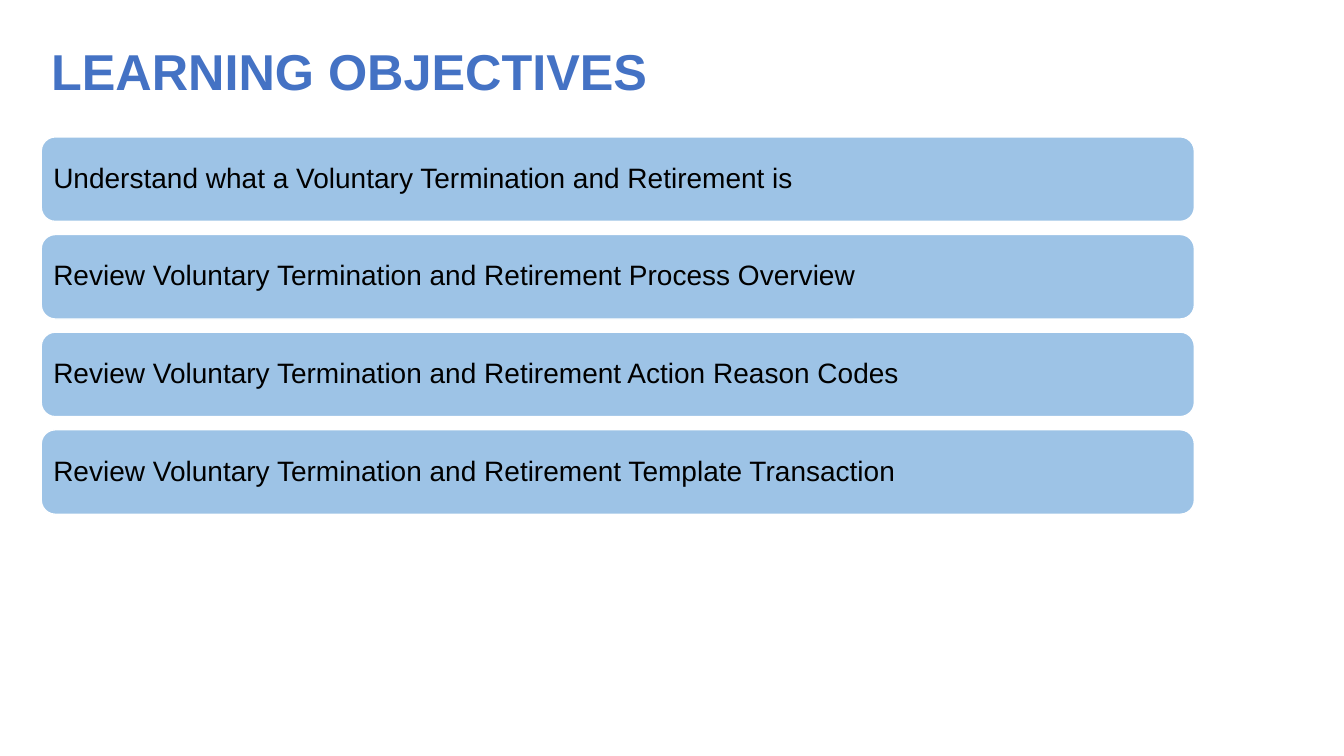
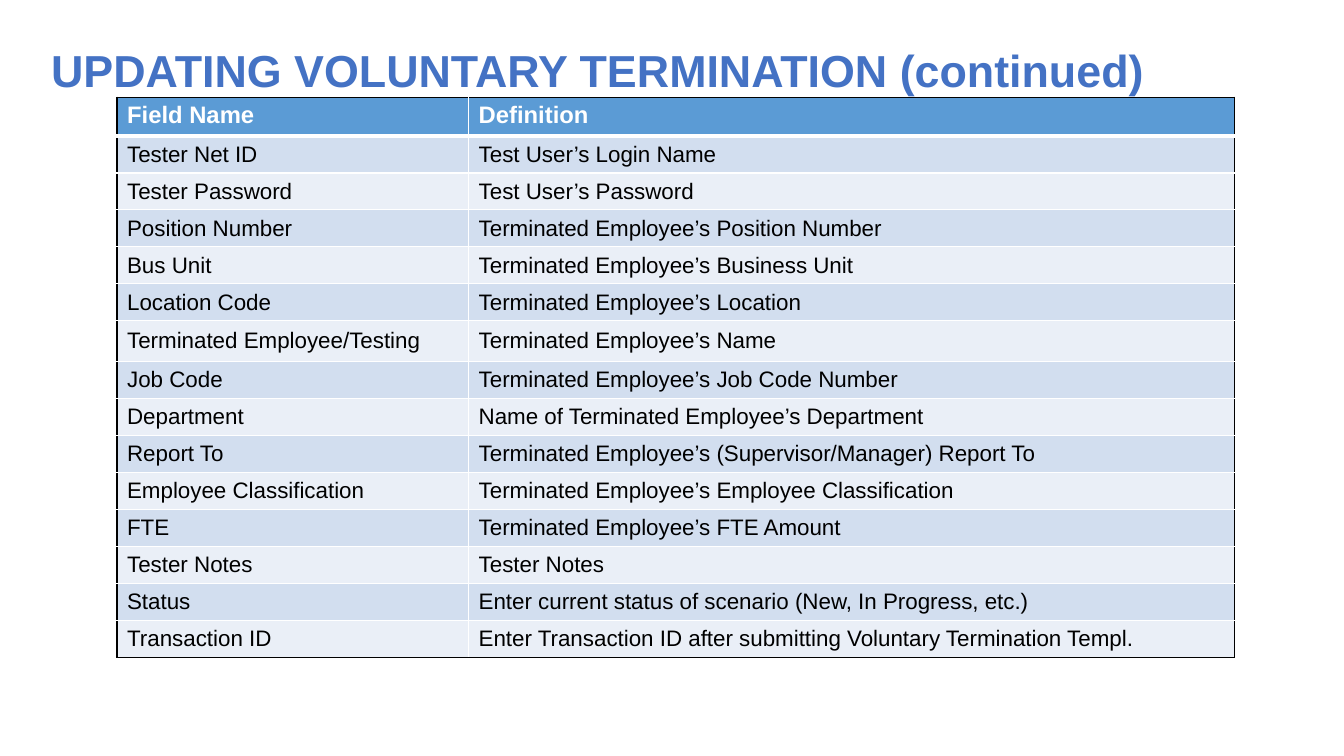
"""Build two training slides: learning objectives and a field table."""
from dataclasses import dataclass
from typing import Any

from lxml import etree
from pptx import Presentation
from pptx import util as u
from pptx.dml import color as col
from pptx.enum import shapes, text
from pptx.oxml import ns

BLUE, PALE, HEAD = "4472C4", "9DC3E6", "5B9BD5"
BANDS = ("D2DEEF", "EAEFF7")
BLACK, WHITE = "000000", "FFFFFF"
FACE = "Arial"
MID = text.MSO_ANCHOR.MIDDLE
LEFT = 1.04


@dataclass(frozen=True)
class Title:
    """Heading of a slide."""
    words: str
    size: int
    width: float


@dataclass(frozen=True)
class Field:
    """Row of the field table."""
    name: str
    sense: str
    high: float = 0.91


GOALS = (
    "Understand what a Voluntary Termination and Retirement is",
    "Review Voluntary Termination and Retirement Process Overview",
    "Review Voluntary Termination and Retirement Action Reason Codes",
    "Review Voluntary Termination and Retirement Template Transaction",
)

FIELDS = (
    Field("Field Name", "Definition"),
    Field("Tester Net ID", "Test User’s Login Name"),
    Field("Tester Password", "Test User’s Password"),
    Field("Position Number", "Terminated Employee’s Position Number"),
    Field("Bus Unit", "Terminated Employee’s Business Unit"),
    Field("Location Code", "Terminated Employee’s Location"),
    Field("Terminated Employee/Testing", "Terminated Employee’s Name", 1.02),
    Field("Job Code", "Terminated Employee’s Job Code Number"),
    Field("Department", "Name of Terminated Employee’s Department"),
    Field("Report To", "Terminated Employee’s (Supervisor/Manager) Report To"),
    Field("Employee Classification", "Terminated Employee’s Employee Classification"),
    Field("FTE", "Terminated Employee’s FTE Amount"),
    Field("Tester Notes", "Tester Notes"),
    Field("Status", "Enter current status of scenario (New, In Progress, etc.)"),
    Field("Transaction ID",
          "Enter Transaction ID after submitting Voluntary Termination Templ.", 0.94),
)


def apply(item: Any, form: dict[str, Any]) -> None:
    """Set each attribute named in a dict."""
    for key, val in form.items():
        setattr(item, key, val)


def paint(part: Any, tone: str) -> None:
    """Give a fill or a line one solid colour."""
    fill = getattr(part, "fill", part)
    fill.solid()
    fill.fore_color.rgb = col.RGBColor.from_string(tone)


def write(frame: Any, words: str, size: int, tone: str, bold: bool = False) -> None:
    """Put one styled left-aligned paragraph in a text frame."""
    para = frame.paragraphs[0]
    para.text = words
    para.alignment = text.PP_ALIGN.LEFT
    apply(para.font, {"name": FACE, "size": u.Pt(size), "bold": bold})
    para.font.color.rgb = col.RGBColor.from_string(tone)


def start(deck: Any, title: Title) -> Any:
    """Add a blank slide with its title."""
    slide = deck.slides.add_slide(deck.slide_layouts[6])
    box = slide.shapes.add_textbox(u.Cm(LEFT), u.Cm(0.81), u.Cm(title.width), u.Cm(1.91))
    apply(box.text_frame, {"word_wrap": True, "vertical_anchor": MID})
    write(box.text_frame, title.words, title.size, BLUE, True)
    return slide


def bars(slide: Any) -> None:
    """Draw the stack of objectives."""
    top, step, pad = 3.45, 2.46, u.Cm(0.2)
    form = {"word_wrap": True, "vertical_anchor": MID, "margin_left": pad,
            "margin_right": pad, "margin_top": pad, "margin_bottom": pad}
    for idx, goal in enumerate(GOALS):
        bar = slide.shapes.add_shape(
            shapes.MSO_SHAPE.ROUNDED_RECTANGLE,
            u.Cm(LEFT), u.Cm(top + idx * step), u.Cm(29.06), u.Cm(2.13))
        bar.shadow.inherit = False
        paint(bar, PALE)
        paint(bar.line, WHITE)
        bar.line.width = u.Pt(1)
        apply(bar.text_frame, form)
        write(bar.text_frame, goal, 20, BLACK)
        bar.text_frame.paragraphs[0].line_spacing = 0.9


def edge(cell: Any, side: str, tone: str, width: int) -> None:
    """Add one border to a cell."""
    line = etree.SubElement(cell._tc.get_or_add_tcPr(), ns.qn(f"a:ln{side}"),
                            w=str(u.Pt(width)))
    fill = etree.SubElement(line, ns.qn("a:solidFill"))
    etree.SubElement(fill, ns.qn("a:srgbClr"), val=tone)


def grid(slide: Any) -> None:
    """Draw the table of fields."""
    wide = (8.86, 19.3)
    last = len(FIELDS) - 1
    high = sum(field.high for field in FIELDS)
    table = slide.shapes.add_table(len(FIELDS), len(wide), u.Cm(2.95), u.Cm(2.45),
                                   u.Cm(sum(wide)), u.Cm(high)).table
    for part, width in zip(table.columns, wide):
        part.width = u.Cm(width)
    for row, field in enumerate(FIELDS):
        table.rows[row].height = u.Cm(field.high)
        first = row == 0
        for pos, words in enumerate((field.name, field.sense)):
            cell = table.cell(row, pos)
            outer = {"L": pos == 0, "R": pos == 1, "T": first, "B": row == last}
            for side, out in outer.items():
                thick = 3 if (row, side) in ((0, "B"), (1, "T")) else 1
                edge(cell, side, BLACK if out else WHITE, thick)
            paint(cell, HEAD if first else BANDS[(row - 1) % 2])
            cell.vertical_anchor = text.MSO_ANCHOR.TOP if first else MID
            write(cell.text_frame, words, 17 if first else 16,
                  WHITE if first else BLACK, first)


def main() -> None:
    """Build and save the deck."""
    deck = Presentation()
    apply(deck, {"slide_width": u.Cm(33.87), "slide_height": u.Cm(19.05)})
    bars(start(deck, Title("LEARNING OBJECTIVES", 36, 25.12)))
    grid(start(deck, Title("UPDATING VOLUNTARY TERMINATION (continued)", 32, 32.28)))
    deck.save("out.pptx")


if __name__ == "__main__":
    main()
